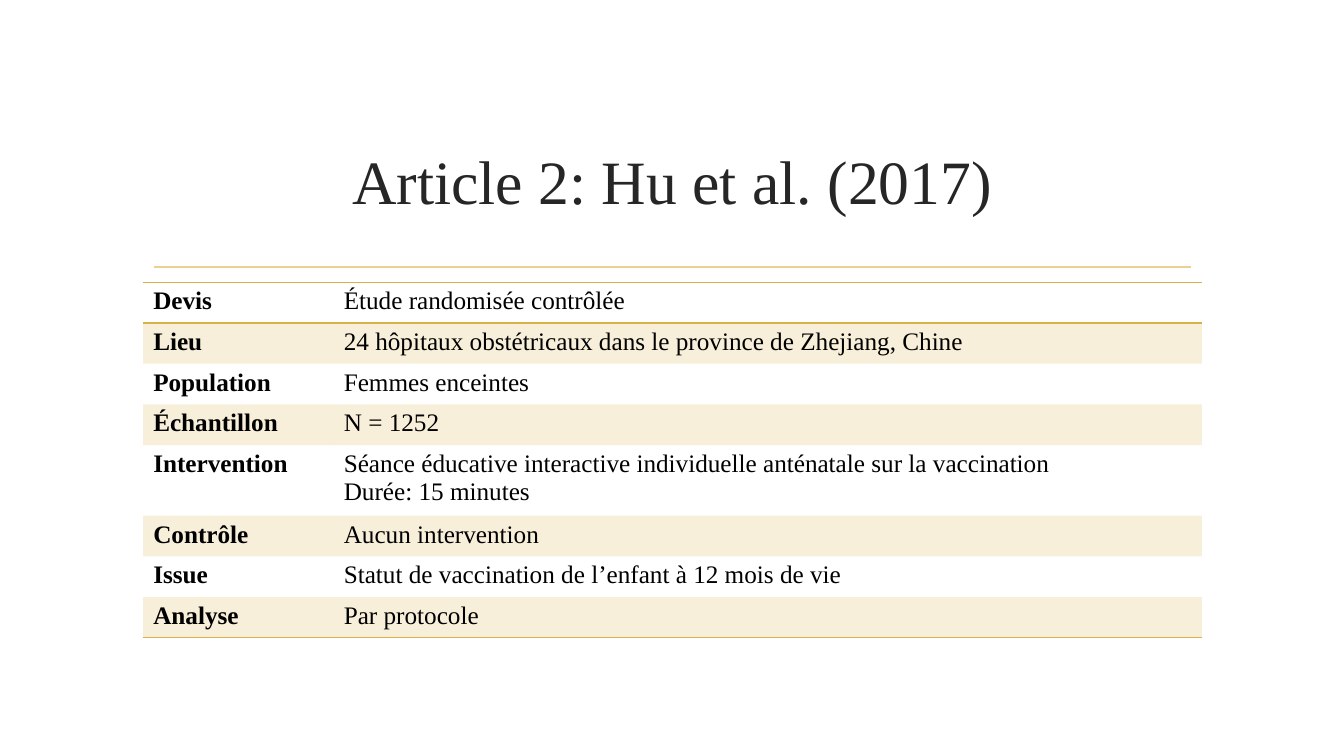
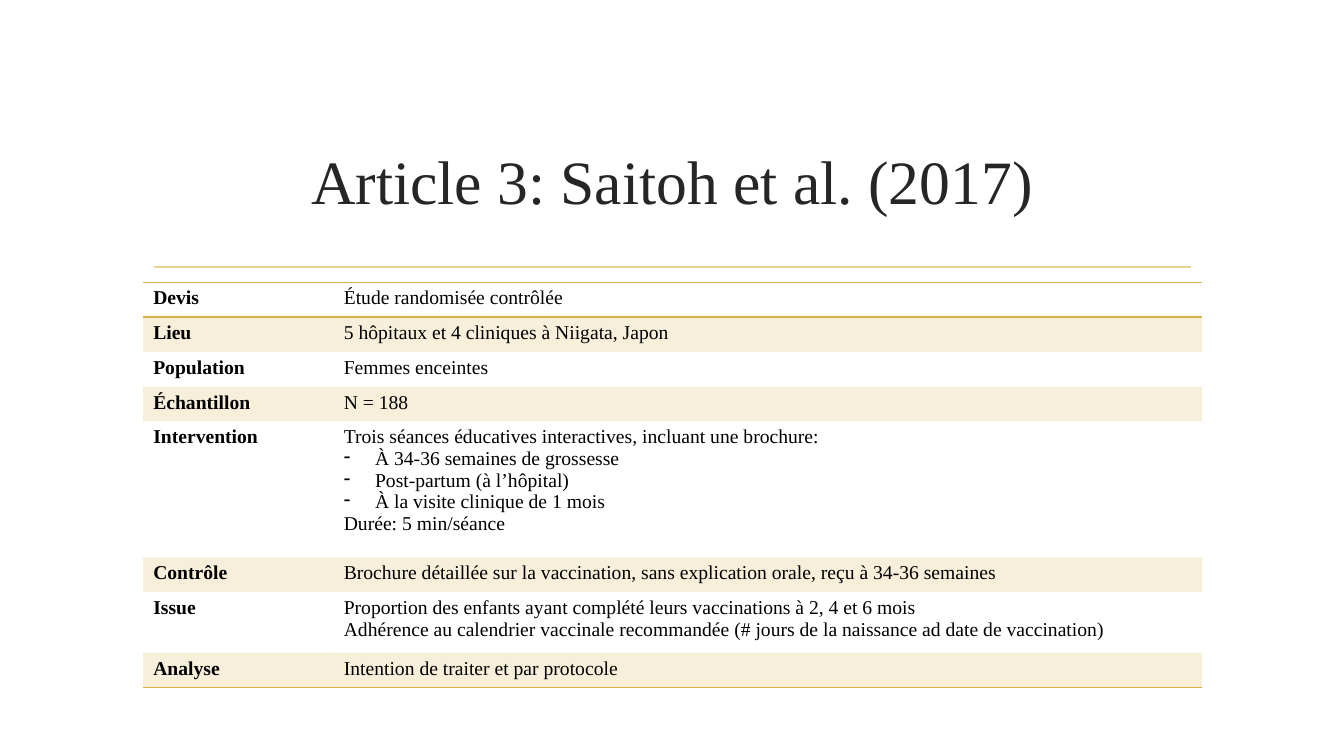
from lxml import etree
from pptx import Presentation
from pptx.dml.color import RGBColor
from pptx.enum.shapes import MSO_CONNECTOR
from pptx.enum.text import MSO_ANCHOR, PP_ALIGN
from pptx.oxml import parse_xml
from pptx.oxml.ns import nsdecls, qn
from pptx.util import Inches, Pt

# Shared look
FONT = "Times New Roman"
TITLE_COLOR, TEXT_COLOR = "262626", "000000"
GOLD, RULE_COLOR = "D9B247", "E8D191"
LEFT, WIDTH, LABEL_WIDTH = 1.42, 10.5, 1.89
NO_STYLE = "{2D5ABB26-0587-4C30-8999-92F81FD0307C}"
LABELS = ["Devis", "Lieu", "Population", "Échantillon",
          "Intervention", "Contrôle", "Issue", "Analyse"]

# Lines that start with "- " become dashed list items
ARTICLES = [
    {
        "title": "Article 2: Hu et al. (2017)",
        "size": 18,
        "height": 3.49,
        "tall_rows": {"Intervention": 0.66},
        "values": [
            "Étude randomisée contrôlée",
            "24 hôpitaux obstétricaux dans le province de Zhejiang, Chine",
            "Femmes enceintes",
            "N = 1252",
            "Séance éducative interactive individuelle anténatale sur la vaccination\n"
            "Durée: 15 minutes",
            "Aucun intervention",
            "Statut de vaccination de l’enfant à 12 mois de vie",
            "Par protocole",
        ],
    },
    {
        "title": "Article 3: Saitoh et al. (2017)",
        "size": 14,
        "height": 4.02,
        "tall_rows": {"Intervention": 1.35, "Issue": 0.6},
        "values": [
            "Étude randomisée contrôlée",
            "5 hôpitaux et 4 cliniques à Niigata, Japon",
            "Femmes enceintes",
            "N = 188",
            "Trois séances éducatives interactives, incluant une brochure:\n"
            "- À 34-36 semaines de grossesse\n"
            "- Post-partum (à l’hôpital)\n"
            "- À la visite clinique de 1 mois\n"
            "Durée: 5 min/séance",
            "Brochure détaillée sur la vaccination, sans explication orale, reçu à 34-36 semaines",
            "Proportion des enfants ayant complété leurs vaccinations à 2, 4 et 6 mois\n"
            "Adhérence au calendrier vaccinale recommandée "
            "(# jours de la naissance ad date de vaccination)",
            "Intention de traiter et par protocole",
        ],
    },
]


def write_text(frame, text, size, color=TEXT_COLOR, bold=False, align=PP_ALIGN.LEFT):
    for index, line in enumerate(text.split("\n")):
        paragraph = frame.paragraphs[0] if index == 0 else frame.add_paragraph()
        paragraph.alignment = align
        if line.startswith("- "):
            properties = paragraph._p.get_or_add_pPr()
            properties.set("marL", str(Inches(0.31)))
            properties.set("indent", str(Inches(-0.31)))
            etree.SubElement(properties, qn("a:buChar")).set("char", "-")
        run = paragraph.add_run()
        run.text = line.removeprefix("- ")
        run.font.name, run.font.size, run.font.bold = FONT, Pt(size), bold
        run.font.color.rgb = RGBColor.from_string(color)


def style_cell(cell, shaded, edges):
    if shaded:
        cell.fill.solid()
        cell.fill.fore_color.rgb = RGBColor.from_string(GOLD)
    else:
        cell.fill.background()
    properties = cell._tc.get_or_add_tcPr()
    for color in properties.iter(qn("a:srgbClr")):
        etree.SubElement(color, qn("a:alpha")).set("val", "20000")
    # Borders come before the fill, top before bottom
    for position, edge in enumerate(edges):
        properties.insert(position, parse_xml(
            f'<a:ln{edge} {nsdecls("a")} w="{Pt(1)}"><a:solidFill>'
            f'<a:srgbClr val="{GOLD}"/></a:solidFill></a:ln{edge}>'))


presentation = Presentation()
presentation.slide_width, presentation.slide_height = Inches(13.33), Inches(7.5)

for article in ARTICLES:
    slide = presentation.slides.add_slide(presentation.slide_layouts[6])

    # Rule under the title
    rule = slide.shapes.add_connector(
        MSO_CONNECTOR.STRAIGHT, Inches(1.53), Inches(2.65), Inches(11.81), Inches(2.65))
    rule.line.color.rgb = RGBColor.from_string(RULE_COLOR)
    rule.line.width = Pt(1.25)
    etree.SubElement(rule._element.spPr, qn("a:effectLst"))

    # Title
    title = slide.shapes.add_textbox(Inches(LEFT), Inches(1.07), Inches(WIDTH), Inches(1.43))
    title.text_frame.word_wrap = True
    title.text_frame.vertical_anchor = MSO_ANCHOR.MIDDLE
    write_text(title.text_frame, article["title"], 44, color=TITLE_COLOR, align=PP_ALIGN.CENTER)

    # Table: the rows that are not tall share the remaining height
    table = slide.shapes.add_table(
        len(LABELS), 2, Inches(LEFT), Inches(2.8), Inches(WIDTH), Inches(article["height"])).table
    table._tbl.tblPr.find(qn("a:tableStyleId")).text = NO_STYLE
    table.columns[0].width = Inches(LABEL_WIDTH)
    table.columns[1].width = Inches(WIDTH - LABEL_WIDTH)
    tall_rows = article["tall_rows"]
    row_height = (article["height"] - sum(tall_rows.values())) / (len(LABELS) - len(tall_rows))
    borders = {0: "TB", len(LABELS) - 1: "B"}

    for row, (label, value) in enumerate(zip(LABELS, article["values"])):
        table.rows[row].height = Inches(tall_rows.get(label, row_height))
        for column, text in enumerate((label, value)):
            cell = table.cell(row, column)
            style_cell(cell, shaded=row % 2 == 1, edges=borders.get(row, ""))
            write_text(cell.text_frame, text, article["size"], bold=column == 0)

presentation.save("out.pptx")
